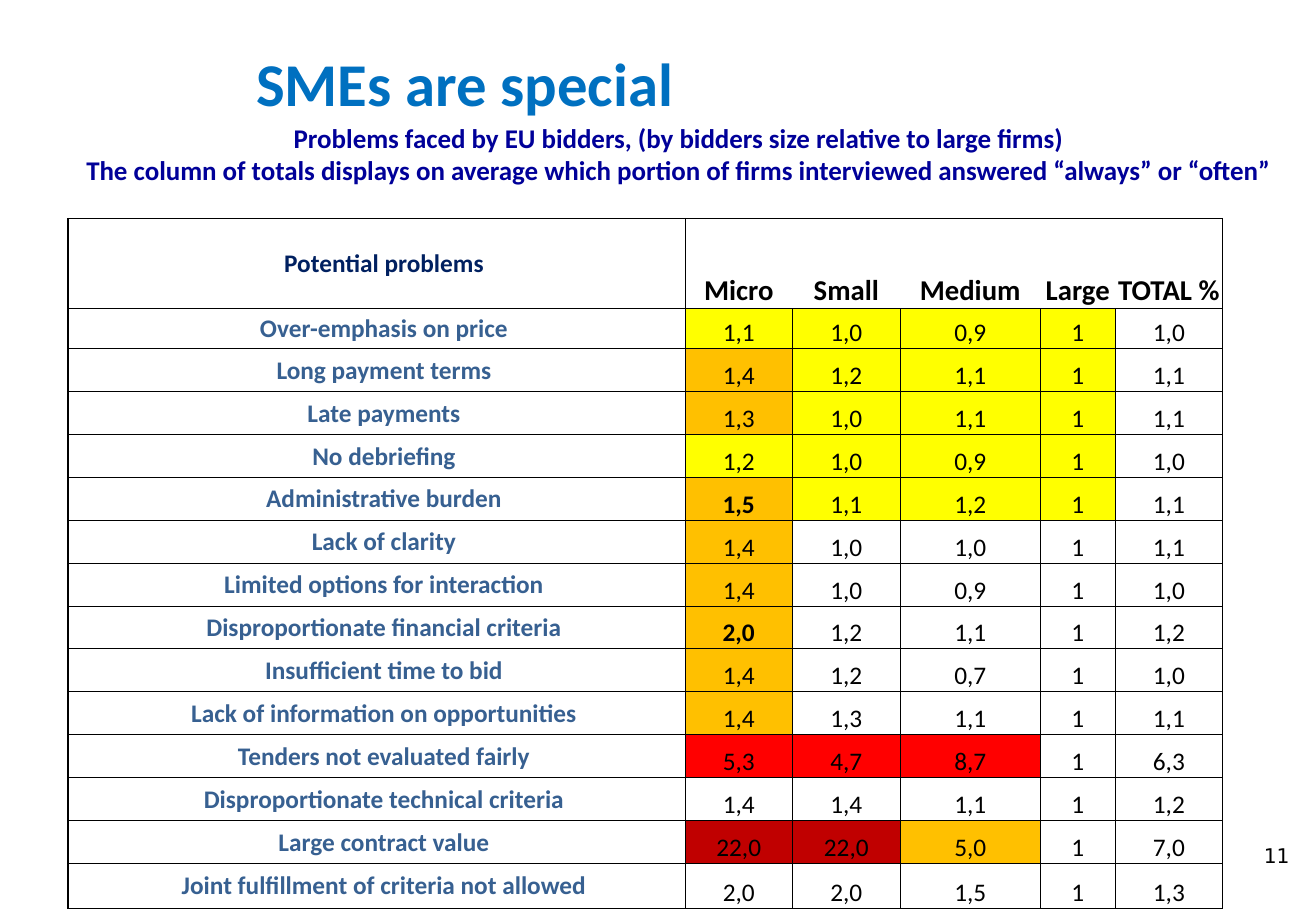
from dataclasses import dataclass

from lxml.etree import SubElement
from pptx import Presentation
from pptx.dml.color import RGBColor
from pptx.enum.text import MSO_ANCHOR, PP_ALIGN
from pptx.oxml.ns import qn
from pptx.util import Inches, Pt

TITLE = "SMEs are special"
SUBTITLE = (
    "Problems faced by EU bidders, (by bidders size relative to large firms)\v"
    "The column of totals displays on average which portion of firms "
    "interviewed answered “always” or “often”"
)
PAGE_NUMBER = "11"
HEADERS = ["Potential problems", "Micro", "Small", "Medium", "Large", "TOTAL %"]
# Problem, values by firm size, and one fill key per value
PROBLEMS = [
    ("Over-emphasis on price", "1,1 1,0 0,9 1 1,0", "YYYY-"),
    ("Long payment terms", "1,4 1,2 1,1 1 1,1", "OYYY-"),
    ("Late payments", "1,3 1,0 1,1 1 1,1", "OYYY-"),
    ("No debriefing", "1,2 1,0 0,9 1 1,0", "YYYY-"),
    ("Administrative burden", "1,5 1,1 1,2 1 1,1", "OYYY-"),
    ("Lack of clarity", "1,4 1,0 1,0 1 1,1", "O----"),
    ("Limited options for interaction", "1,4 1,0 0,9 1 1,0", "O----"),
    ("Disproportionate financial criteria", "2,0 1,2 1,1 1 1,2", "O----"),
    ("Insufficient time to bid", "1,4 1,2 0,7 1 1,0", "O----"),
    ("Lack of information on opportunities", "1,4 1,3 1,1 1 1,1", "O----"),
    ("Tenders not evaluated fairly", "5,3 4,7 8,7 1 6,3", "RRR--"),
    ("Disproportionate technical criteria", "1,4 1,4 1,1 1 1,2", "-----"),
    ("Large contract value", "22,0 22,0 5,0 1 7,0", "DDO--"),
    ("Joint fulfillment of criteria not allowed", "2,0 2,0 1,5 1 1,3", "-----"),
]
BOLD_MICRO = {"Administrative burden", "Disproportionate financial criteria"}
FILLS = {"Y": "FFFF00", "O": "FFC000", "R": "FF0000", "D": "C00000"}

COLUMN_WIDTHS = [5.08, 0.88, 0.89, 1.15, 0.62, 0.88]
TABLE_HEIGHT, HEADER_HEIGHT, FIRST_HEIGHT, LAST_HEIGHT = 5.68, 0.74, 0.33, 0.37
LABEL_INDENT, CELL_INSET = 0.13, 0.01


@dataclass(frozen=True)
class Theme:
    font: str = "Calibri"
    number_font: str = "DejaVu Sans"
    title: str = "0070C0"
    subtitle: str = "000099"
    corner: str = "002060"
    label: str = "376091"
    ink: str = "000000"
    title_size: int = 36
    subtitle_size: int = 16
    header_size: int = 17
    cell_size: int = 15
    number_size: int = 12
    outer_line: float = 1
    inner_line: float = 0.5


THEME = Theme()


def write(frame, text, size, color, bold=True, font=THEME.font, align=PP_ALIGN.CENTER):
    frame.text = text
    para = frame.paragraphs[0]
    para.alignment = align
    for span in para.runs:
        span.font.name = font
        span.font.size = Pt(size)
        span.font.bold = bold
        span.font.color.rgb = RGBColor.from_string(color)


def add_text_box(page, left, top, width, height):
    frame = page.shapes.add_textbox(*map(Inches, (left, top, width, height))).text_frame
    frame.word_wrap = True
    frame.margin_left = frame.margin_right = frame.margin_top = frame.margin_bottom = 0
    return frame


def set_borders(cell, widths):
    """Draw left, right, top and bottom borders; a width of 0 draws none."""
    properties = cell._tc.get_or_add_tcPr()
    for index, (side, width) in enumerate(zip("LRTB", widths)):
        line = SubElement(properties, qn(f"a:ln{side}"), w=str(Pt(width)))
        if width:
            solid = SubElement(line, qn("a:solidFill"))
            SubElement(solid, qn("a:srgbClr"), val=THEME.ink)
        else:
            SubElement(line, qn("a:noFill"))
        properties.insert(index, line)


def border_widths(row, column):
    outer, inner = THEME.outer_line, THEME.inner_line
    if (row, column) == (0, 0):
        return [outer] * 4
    last_row, last_column = len(PROBLEMS), len(HEADERS) - 1
    vertical = inner if row else 0
    left_outer = column == 0 or (row == 0 and column == 1)
    top_outer = row == 0 or (row == 1 and column == 0)
    return [
        outer if left_outer else vertical,
        outer if column == last_column else vertical,
        outer if top_outer else inner,
        outer if row == last_row else inner,
    ]


def format_cell(cell, row, column, text, key, bold):
    is_label = column == 0
    cell.margin_left = Inches(LABEL_INDENT if is_label else CELL_INSET)
    cell.margin_right = cell.margin_top = Inches(CELL_INSET)
    cell.margin_bottom = 0
    cell.vertical_anchor = MSO_ANCHOR.MIDDLE if is_label else MSO_ANCHOR.BOTTOM
    size = THEME.cell_size if row or is_label else THEME.header_size
    color = THEME.ink
    if is_label:
        color = THEME.label if row else THEME.corner
    write(cell.text_frame, text, size, color, bold)
    if key in FILLS:
        cell.fill.solid()
        cell.fill.fore_color.rgb = RGBColor.from_string(FILLS[key])
    else:
        cell.fill.background()
    set_borders(cell, border_widths(row, column))


def add_problem_table(page):
    rows = [(HEADERS, "------")]
    rows += [([name, *values.split()], "-" + keys) for name, values, keys in PROBLEMS]
    table = page.shapes.add_table(
        len(rows), len(HEADERS), Inches(0.56), Inches(1.8),
        Inches(sum(COLUMN_WIDTHS)), Inches(TABLE_HEIGHT),
    ).table
    table.first_row = table.horz_banding = False
    for column, width in zip(table.columns, COLUMN_WIDTHS):
        column.width = Inches(width)
    middle_count = len(PROBLEMS) - 2
    middle = (TABLE_HEIGHT - HEADER_HEIGHT - FIRST_HEIGHT - LAST_HEIGHT) / middle_count
    heights = [HEADER_HEIGHT, FIRST_HEIGHT, *[middle] * middle_count, LAST_HEIGHT]
    for row, (texts, keys) in enumerate(rows):
        table.rows[row].height = Inches(heights[row])
        for column, (text, key) in enumerate(zip(texts, keys)):
            bold = row == 0 or column == 0 or (column == 1 and texts[0] in BOLD_MICRO)
            format_cell(table.cell(row, column), row, column, text, key, bold)


def main():
    deck = Presentation()
    deck.slide_width, deck.slide_height = Inches(10.83), Inches(7.5)
    page = deck.slides.add_slide(deck.slide_layouts[5])

    title = page.shapes.title
    title.left, title.top = Inches(0.54), Inches(0.3)
    title.width, title.height = Inches(6.57), Inches(0.76)
    title.text_frame.vertical_anchor = MSO_ANCHOR.MIDDLE
    write(title.text_frame, TITLE, THEME.title_size, THEME.title)

    add_problem_table(page)
    subtitle = add_text_box(page, 0.34, 1, 10.49, 0.77)
    write(subtitle, SUBTITLE, THEME.subtitle_size, THEME.subtitle)
    number = add_text_box(page, 10.4, 6.94, 0.45, 0.2)
    write(number, PAGE_NUMBER, THEME.number_size, THEME.ink, False,
          THEME.number_font, PP_ALIGN.LEFT)

    deck.save("out.pptx")


if __name__ == "__main__":
    main()
